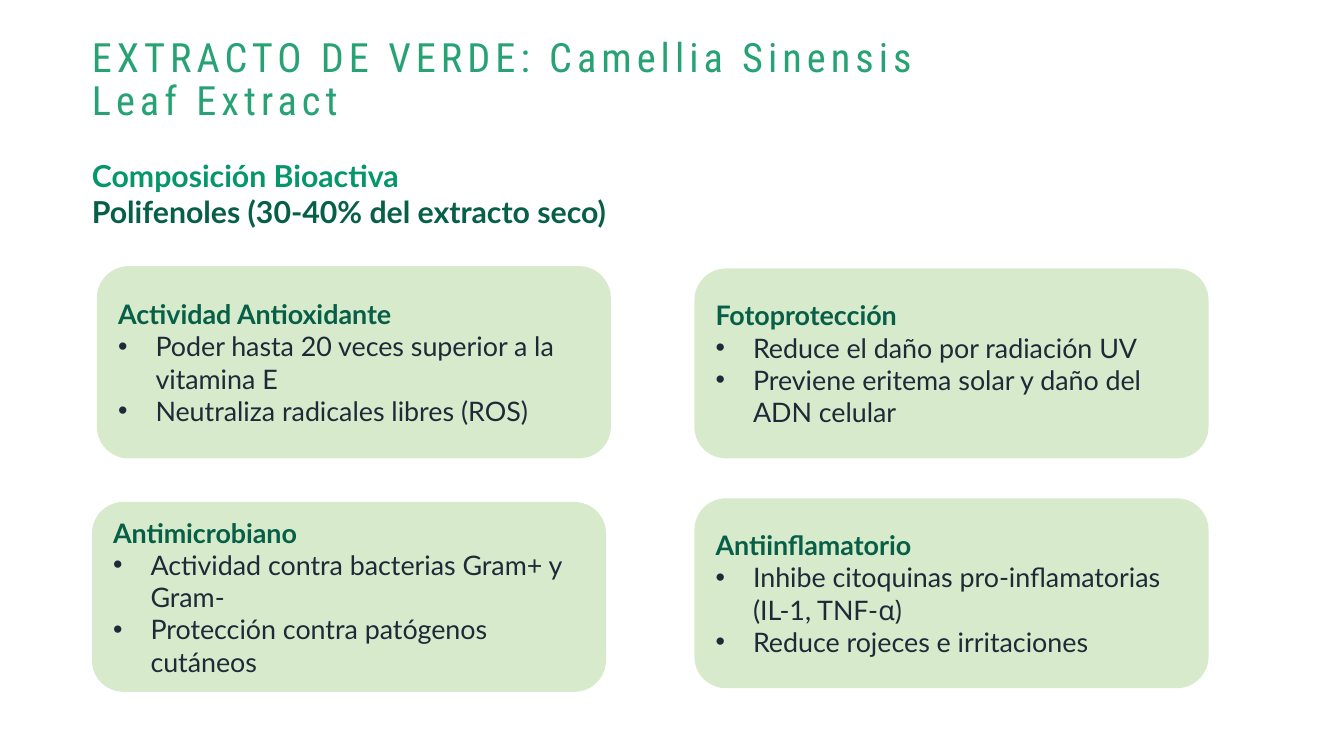
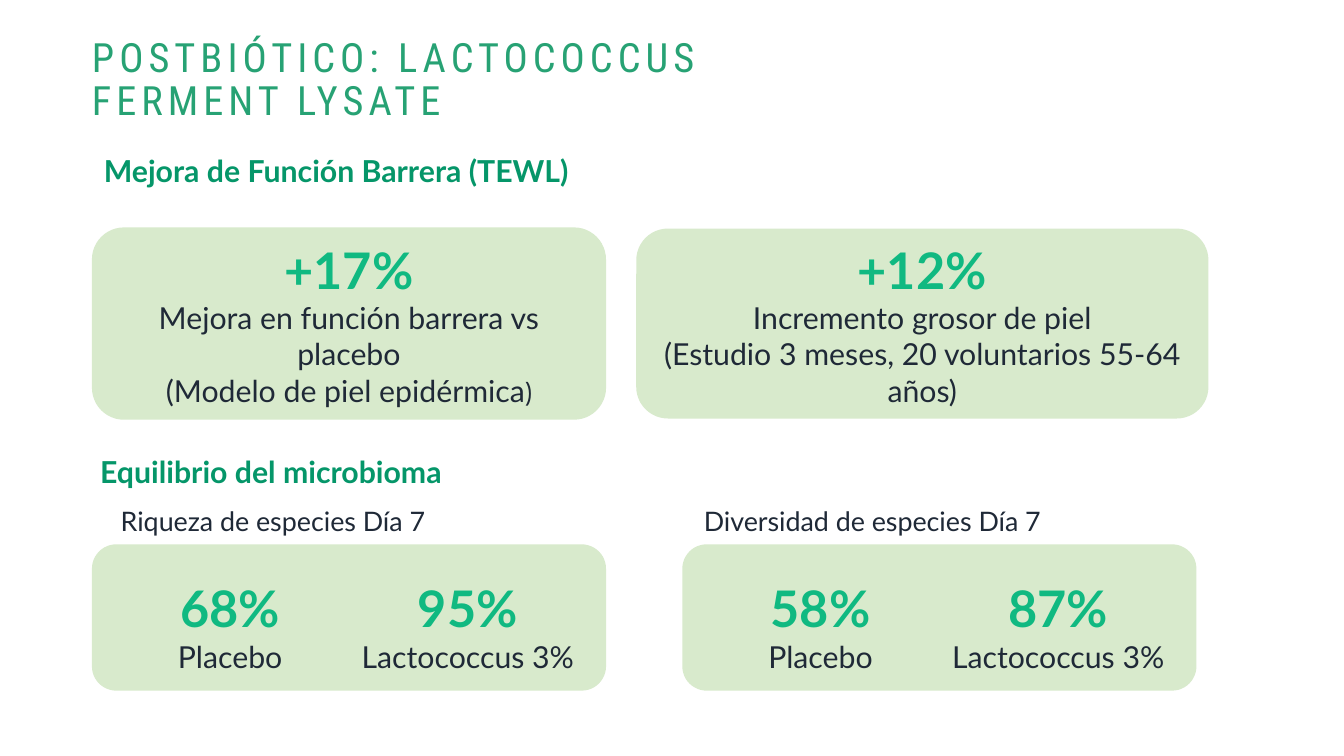
import pptx
import pptx.util
import pptx.dml.color
import pptx.enum.shapes
import pptx.enum.text
from lxml import etree

Inches = pptx.util.Inches
RGBColor = pptx.dml.color.RGBColor
Align = pptx.enum.text.PP_ALIGN
Anchor = pptx.enum.text.MSO_ANCHOR

TITLE_GREEN = RGBColor(0x27, 0xA2, 0x74)
HEADING_GREEN = RGBColor(0x05, 0x96, 0x69)
DARK_GREEN = RGBColor(0x06, 0x5F, 0x46)
FIGURE_GREEN = RGBColor(0x10, 0xB9, 0x81)
CARD_GREEN = RGBColor(0xD8, 0xEA, 0xCC)
INK = RGBColor(0x1F, 0x29, 0x37)
WHITE = RGBColor(0xFF, 0xFF, 0xFF)

# Text styles: font, size, colour, bold
TITLE = ("Roboto Condensed", 24, TITLE_GREEN, False)
HEADING = ("Lato", 18, HEADING_GREEN, True)
SUBHEADING = ("Lato", 18, DARK_GREEN, True)
CARD_HEADING = ("Lato", 16, DARK_GREEN, True)
BODY = ("Lato", 16, INK, False)
BODY_ALT = ("Cabin", 16, INK, False)
FIGURE = ("Lato", 30, FIGURE_GREEN, True)
CAPTION = ("Lato", 18, INK, False)

LEFT = 0.76
CARD_WIDTH = 4.25


def add_span(para, text, style):
    span = para.add_run()
    span.text = text
    font = span.font
    font.name, size, font.color.rgb, font.bold = style
    font.size = pptx.util.Pt(size)
    return span


def write_lines(frame, lines, align=Align.LEFT):
    """Each line is a list of (text, style) spans."""
    for index, spans in enumerate(lines):
        para = frame.add_paragraph() if index else frame.paragraphs[0]
        para.alignment = align
        for text, style in spans:
            add_span(para, text, style)


def add_bullet(para):
    props = para._p.get_or_add_pPr()
    props.set("marL", str(Inches(0.31)))
    props.set("indent", str(Inches(-0.31)))
    for tag, name, value in (("buFont", "typeface", "Arial"), ("buChar", "char", "•")):
        etree.SubElement(props, pptx.oxml.ns.qn("a:" + tag)).set(name, value)


def add_text(page, box, lines, align=Align.LEFT, anchor=Anchor.TOP, inset=(0.1, 0.05)):
    frame = page.shapes.add_textbox(*map(Inches, box)).text_frame
    frame.word_wrap = True
    frame.vertical_anchor = anchor
    frame.margin_left = frame.margin_right = Inches(inset[0])
    frame.margin_top = frame.margin_bottom = Inches(inset[1])
    write_lines(frame, lines, align)
    return frame


def add_title(page, text, width):
    box = (LEFT, 0.49, width, 0.36)
    frame = add_text(page, box, [[(text, TITLE)]], anchor=Anchor.MIDDLE, inset=(0, 0))
    para = frame.paragraphs[0]
    para.line_spacing = 0.9
    para.runs[0].font._element.set("spc", "300")


def add_card(page, box, lines=(), align=Align.LEFT):
    card = page.shapes.add_shape(
        pptx.enum.shapes.MSO_SHAPE.ROUNDED_RECTANGLE, *map(Inches, box))
    card.shadow.inherit = False
    card.fill.solid()
    card.fill.fore_color.rgb = CARD_GREEN
    card.line.fill.background()
    card.text_frame.word_wrap = True
    card.text_frame.vertical_anchor = Anchor.MIDDLE
    write_lines(card.text_frame, lines, align)
    return card


def add_benefit_card(page, box, heading, points):
    """Card with a heading and bulleted points."""
    card = add_card(page, box, [[(heading, CARD_HEADING)], *points])
    for para in card.text_frame.paragraphs[1:]:
        add_bullet(para)


def add_comparison(page, box, label, label_offset, results):
    """Label above a card that holds two results side by side."""
    left, top, width, height = box
    add_text(page, (left + label_offset, top - 0.38, 4.36, 0.37), [[(label, BODY)]])
    add_card(page, box)
    inset = 0.16
    column = (width - 2 * inset) / len(results)
    for index, (figure, caption) in enumerate(results):
        cell = (left + inset + index * column, top + 0.07, column, height)
        add_text(page, cell, [[(figure, FIGURE)], [(caption, CAPTION)]],
                 Align.CENTER, Anchor.MIDDLE, (0, 0))


def add_page(deck):
    page = deck.slides.add_slide(deck.slide_layouts[6])
    page.background.fill.solid()
    page.background.fill.fore_color.rgb = WHITE
    return page


def build_extract_page(deck):
    page = add_page(deck)
    add_title(page, "EXTRACTO DE VERDE: Camellia Sinensis Leaf Extract", 7.5)
    add_text(page, (LEFT, 1.29, 8.88, 0.61),
             [[("Composición Bioactiva", HEADING)],
              [("Polifenoles (30-40% del extracto seco)", SUBHEADING)]],
             inset=(0, 0.01))
    benefits = [
        ((0.8, 2.2, 1.59), "Actividad Antioxidante",
         [[("Poder hasta 20 veces superior a la vitamina E", BODY)],
          [("Neutraliza radicales libres (ROS)", BODY)]]),
        ((5.74, 2.22, 1.57), "Fotoprotección",
         [[("Reduce el daño por radiación UV", BODY)],
          [("Previene eritema solar y daño del ADN celular", BODY)]]),
        ((LEFT, 4.15, 1.57), "Antimicrobiano",
         [[("Actividad contra bacterias Gram+ y Gram-", BODY)],
          [("Protección contra patógenos cutáneos", BODY)]]),
        ((5.74, 4.12, 1.57), "Antiinflamatorio",
         [[("Inhibe citoquinas pro-inflamatorias (IL-1, TNF-", BODY), ("α)", BODY_ALT)],
          [("Reduce rojeces e irritaciones", BODY)]]),
    ]
    for (left, top, height), heading, points in benefits:
        add_benefit_card(page, (left, top, CARD_WIDTH, height), heading, points)


def build_postbiotic_page(deck):
    page = add_page(deck)
    add_title(page, "POSTBIÓTICO: LACTOCOCCUS FERMENT LYSATE", 6.18)

    # Barrier function
    add_text(page, (LEFT, 1.21, 8.96, 0.4), [[("Mejora de Función Barrera (TEWL)", HEADING)]])
    add_card(page, (LEFT, 1.88, CARD_WIDTH, 1.59),
             [[("+17%", FIGURE)],
              [("Mejora en función barrera vs placebo", CAPTION)],
              [("(Modelo de piel epidérmica", CAPTION), (")", BODY_ALT)]], Align.CENTER)
    add_card(page, (5.26, 1.89, 4.73, 1.57),
             [[("+12%", FIGURE)],
              [("Incremento grosor de piel", CAPTION)],
              [("(Estudio 3 meses, 20 voluntarios 55-64 años)", CAPTION)]], Align.CENTER)

    # Microbiome balance
    add_text(page, (0.73, 3.7, 8.96, 0.4), [[("Equilibrio del microbioma", HEADING)]])
    comparisons = [
        (LEFT, "Riqueza de especies Día 7", 0.14, "68%", "95%"),
        (5.64, "Diversidad de especies Día 7", 0.08, "58%", "87%"),
    ]
    for left, label, offset, placebo, treated in comparisons:
        add_comparison(page, (left, 4.5, CARD_WIDTH, 1.21), label, offset,
                       [(placebo, "Placebo"), (treated, "Lactococcus 3%")])


def main():
    deck = pptx.Presentation()
    deck.slide_width = Inches(11.11)
    deck.slide_height = Inches(6.25)
    build_extract_page(deck)
    build_postbiotic_page(deck)
    deck.save("out.pptx")


if __name__ == "__main__":
    main()
